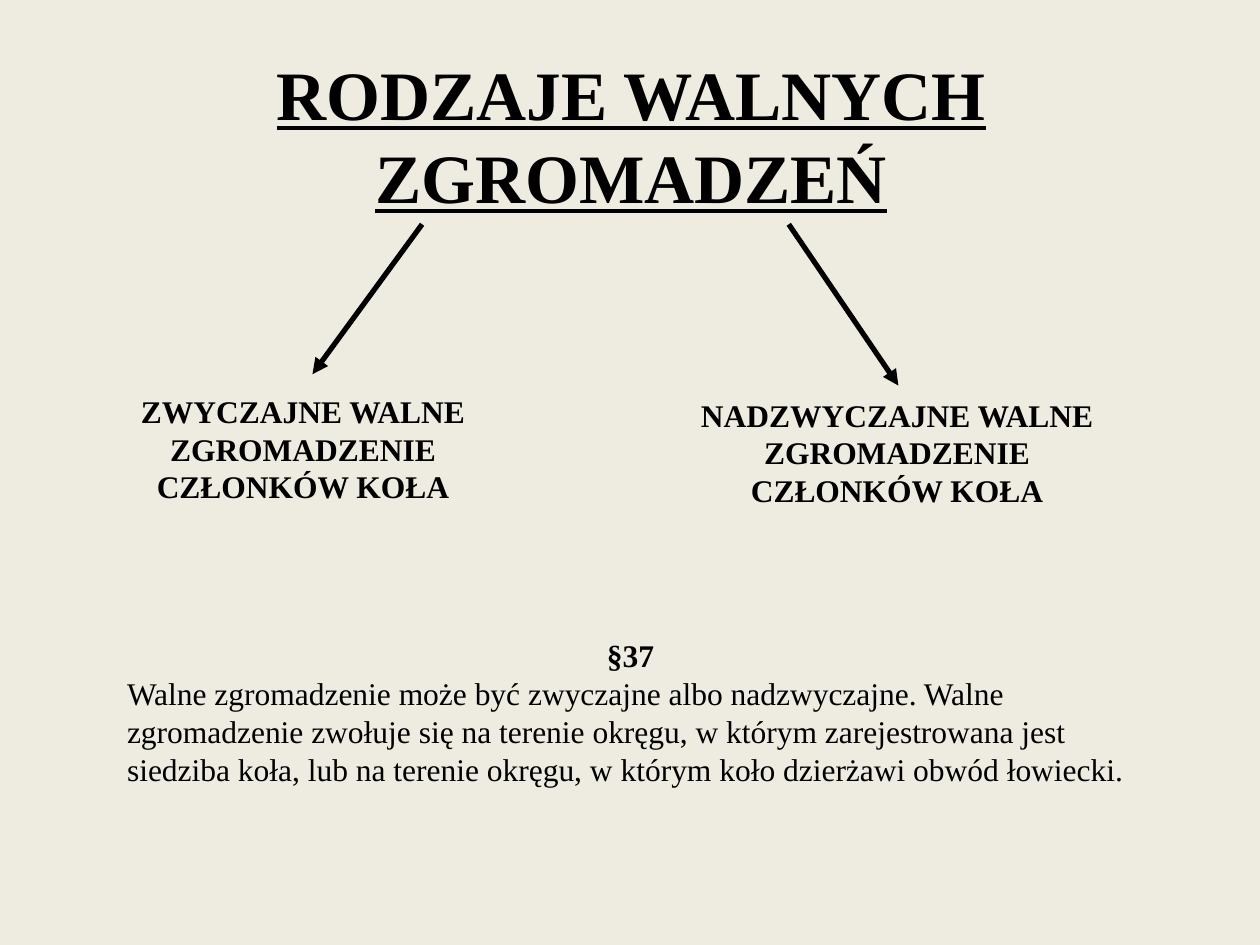
from dataclasses import dataclass

from lxml import etree
from pptx import Presentation
from pptx.dml.color import RGBColor
from pptx.enum.shapes import MSO_CONNECTOR
from pptx.enum.text import MSO_ANCHOR, PP_ALIGN
from pptx.oxml.ns import qn
from pptx.util import Pt

EMU_PER_PX = 9144  # 100 px to the inch
STRAIGHT = MSO_CONNECTOR.STRAIGHT
TOP, MIDDLE = MSO_ANCHOR.TOP, MSO_ANCHOR.MIDDLE
LEFT, CENTER = PP_ALIGN.LEFT, PP_ALIGN.CENTER


@dataclass(frozen=True)
class Theme:
    background: RGBColor = RGBColor(0xEE, 0xEC, 0xE1)
    ink: RGBColor = RGBColor(0, 0, 0)
    font: str = "Times New Roman"
    title_size: float = 39.6
    body_size: float = 18
    arrow_width: float = 3


THEME = Theme()


def px(*lengths):
    return [length * EMU_PER_PX for length in lengths]


def add_text_frame(slide, box, anchor=TOP):
    frame = slide.shapes.add_textbox(*px(*box)).text_frame
    frame.word_wrap = True
    frame.vertical_anchor = anchor
    return frame


def style_paragraph(paragraph, size=THEME.body_size, align=CENTER, bold=True,
                    underline=False):
    paragraph.alignment = align
    for run in paragraph.runs:
        font = run.font
        font.name = THEME.font
        font.size = Pt(size)
        font.bold = bold
        font.underline = underline
        font.color.rgb = THEME.ink


def add_title(slide, text, box):
    frame = add_text_frame(slide, box, MIDDLE)
    frame.text = text
    style_paragraph(frame.paragraphs[0], THEME.title_size, underline=True)


def add_meeting_kind(slide, text, box):
    frame = add_text_frame(slide, box)
    frame.text = text
    style_paragraph(frame.paragraphs[0])


def add_statute(slide, section, clause, box):
    frame = add_text_frame(slide, box)
    frame.text = f"{section}\n{clause}"
    heading, body = frame.paragraphs
    style_paragraph(heading)
    style_paragraph(body, align=LEFT, bold=False)


def add_arrow(slide, start, end):
    arrow = slide.shapes.add_connector(STRAIGHT, *px(*start, *end))
    arrow.line.color.rgb = THEME.ink
    arrow.line.width = Pt(THEME.arrow_width)
    etree.SubElement(arrow.line._get_or_add_ln(), qn("a:tailEnd"), type="triangle")
    etree.SubElement(arrow._element.spPr, qn("a:effectLst"))


def main():
    presentation = Presentation()
    presentation.slide_width, presentation.slide_height = px(1000, 750)
    slide = presentation.slides.add_slide(presentation.slide_layouts[6])
    slide.background.fill.solid()
    slide.background.fill.fore_color.rgb = THEME.background

    add_title(slide, "RODZAJE WALNYCH ZGROMADZEŃ", (51, 44, 900, 125))

    add_arrow(slide, (335, 178), (248, 297))
    add_arrow(slide, (626, 178), (713, 306))

    add_meeting_kind(slide, "ZWYCZAJNE WALNE ZGROMADZENIE CZŁONKÓW KOŁA",
                     (83, 306, 315, 101))
    add_meeting_kind(slide, "NADZWYCZAJNE WALNE ZGROMADZENIE CZŁONKÓW KOŁA",
                     (539, 309, 346, 101))

    add_statute(
        slide,
        "§37",
        "Walne zgromadzenie może być zwyczajne albo nadzwyczajne. "
        "Walne zgromadzenie zwołuje się na terenie okręgu, w którym "
        "zarejestrowana jest siedziba koła, lub na terenie okręgu, "
        "w którym koło dzierżawi obwód łowiecki.",
        (91, 500, 819, 131),
    )

    presentation.save("out.pptx")


if __name__ == "__main__":
    main()
